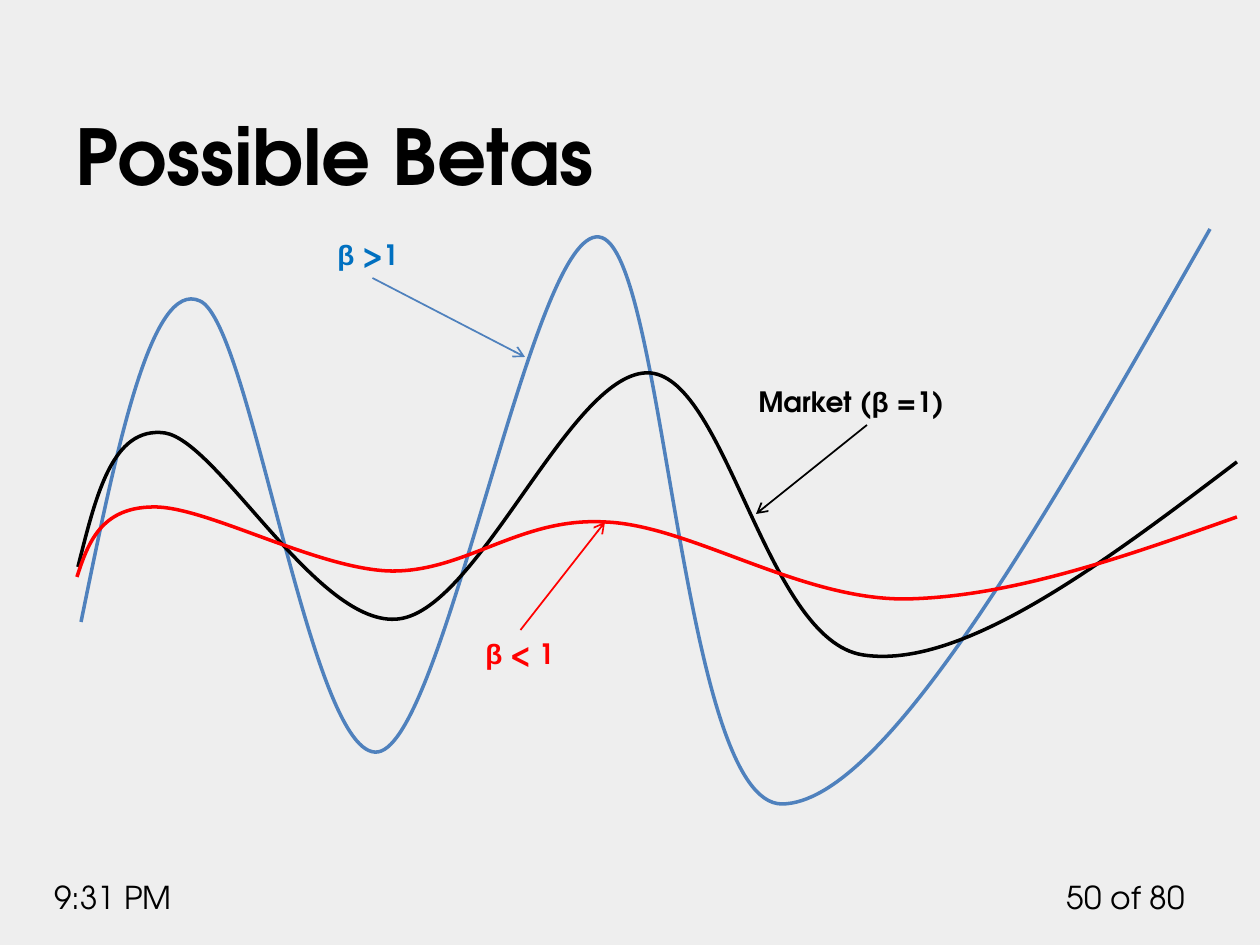
from pptx import Presentation
from pptx.dml.color import RGBColor
from pptx.enum.shapes import MSO_CONNECTOR
from pptx.enum.text import MSO_ANCHOR, MSO_AUTO_SIZE, PP_ALIGN
from pptx.oxml.ns import qn
from pptx.util import Pt
from lxml import etree

STRAIGHT = MSO_CONNECTOR.STRAIGHT
BOTTOM = MSO_ANCHOR.BOTTOM
LEFT, RIGHT = PP_ALIGN.LEFT, PP_ALIGN.RIGHT
FIT_SHAPE, NO_FIT = MSO_AUTO_SIZE.SHAPE_TO_FIT_TEXT, MSO_AUTO_SIZE.NONE
TOP_SIDE, BOTTOM_SIDE = 0, 2

EMU_PER_PX = 914400 / 126
TITLE_ONLY = 5
FONT, GREEK_FONT = "TeX Gyre Adventor", "Arial"
COLORS = {
    "background": "EEEEEE",
    "black": "000000",
    "blue": "4F81BD",
    "label_blue": "0070C0",
    "red": "FF0000",
}

# Each curve: start point, then two control points and an end point per segment.
CURVES = {
    "blue": [
        (81, 622),
        (116, 451), (151, 278), (200, 301),
        (251, 323), (311, 762), (378, 752),
        (445, 741), (532, 228), (599, 237),
        (665, 244), (680, 804), (782, 804),
        (885, 803), (1047, 515), (1210, 229),
    ],
    "black": [
        (78, 567),
        (96, 496), (112, 426), (165, 433),
        (219, 442), (319, 629), (399, 619),
        (480, 609), (572, 368), (650, 373),
        (727, 379), (766, 640), (863, 655),
        (961, 670), (1100, 566), (1237, 462),
    ],
    "red": [
        (77, 577),
        (88, 543), (101, 508), (152, 507),
        (204, 505), (314, 568), (389, 571),
        (465, 573), (519, 517), (605, 522),
        (690, 525), (800, 600), (906, 599),
        (1011, 597), (1124, 557), (1237, 517),
    ],
}

# Label runs, box, text colour, arrow colour, side the arrow leaves, arrow tip
LABELS = [
    (["Market (", "β", " =1)"], (746, 378, 242, 47), "black", "black",
     BOTTOM_SIDE, (756, 514)),
    (["β", " >1"], (325, 231, 95, 47), "label_blue", "blue",
     BOTTOM_SIDE, (525, 357)),
    (["β", " < 1"], (473, 630, 95, 47), "red", "red",
     TOP_SIDE, (605, 522)),
]


def px(n):
    return round(n * EMU_PER_PX)


def rgb(name):
    return RGBColor.from_string(COLORS[name])


class SlideBuilder:
    def __init__(self, s):
        self.s = s
        fill = s.background.fill
        fill.solid()
        fill.fore_color.rgb = rgb("background")

    def style(self, p, size, color="black", bold=False, align=LEFT):
        p.alignment = align
        p.font.size = Pt(size)
        p.font.bold = bold
        p.font.color.rgb = rgb(color)

    def title(self, text, box):
        sp = self.s.shapes.title
        sp.left, sp.top, sp.width, sp.height = map(px, box)
        tf = sp.text_frame
        tf.text = text
        tf.vertical_anchor = BOTTOM
        tf.auto_size = NO_FIT
        p = tf.paragraphs[0]
        self.style(p, 44, bold=True)
        p.font.name = FONT

    def text(self, runs, box, size, **style):
        sp = self.s.shapes.add_textbox(*map(px, box))
        tf = sp.text_frame
        tf.word_wrap = True
        tf.auto_size = FIT_SHAPE
        p = tf.paragraphs[0]
        self.style(p, size, **style)
        for text in runs:
            r = p.add_run()
            r.text = text
            r.font.name = GREEK_FONT if text == "β" else FONT
        return sp

    def curve(self, points, color):
        """Draw a chain of cubic Bézier segments."""
        builder = self.s.shapes.build_freeform(*points[0], scale=EMU_PER_PX)
        builder.add_line_segments(points[1:], close=False)
        sp = builder.convert_to_shape()
        sp.shadow.inherit = False
        sp.fill.background()
        sp.line.color.rgb = rgb(color)
        sp.line.width = Pt(2)
        outline = sp.element.find(".//" + qn("a:path"))
        steps = outline.findall(qn("a:lnTo"))
        for i in range(0, len(steps), 3):
            bezier = etree.SubElement(outline, qn("a:cubicBezTo"))
            for step in steps[i:i + 3]:
                bezier.append(step[0])
                outline.remove(step)

    def arrow(self, label, side, tip, color):
        x, y = map(px, tip)
        line = self.s.shapes.add_connector(STRAIGHT, x, y, x, y)
        line.begin_connect(label, side)
        line.line.color.rgb = rgb(color)
        line.line.width = Pt(1)
        etree.SubElement(line.line._get_or_add_ln(), qn("a:tailEnd"), type="arrow")
        etree.SubElement(line.element.spPr, qn("a:effectLst"))


def main():
    prs = Presentation()
    prs.slide_width, prs.slide_height = px(1260), px(945)
    slide = SlideBuilder(prs.slides.add_slide(prs.slide_layouts[TITLE_ONLY]))

    slide.text(["50 of 80"], (1050, 872, 147, 50), 18, align=RIGHT)
    slide.text(["9:31 PM"], (42, 872, 199, 50), 18)
    slide.title("Possible Betas", (63, 49, 1134, 158))
    for color, points in CURVES.items():
        slide.curve(points, color)
    for runs, box, color, arrow_color, side, tip in LABELS:
        label = slide.text(runs, box, 16, color=color, bold=True)
        slide.arrow(label, side, tip, arrow_color)

    prs.save("out.pptx")


if __name__ == "__main__":
    main()
